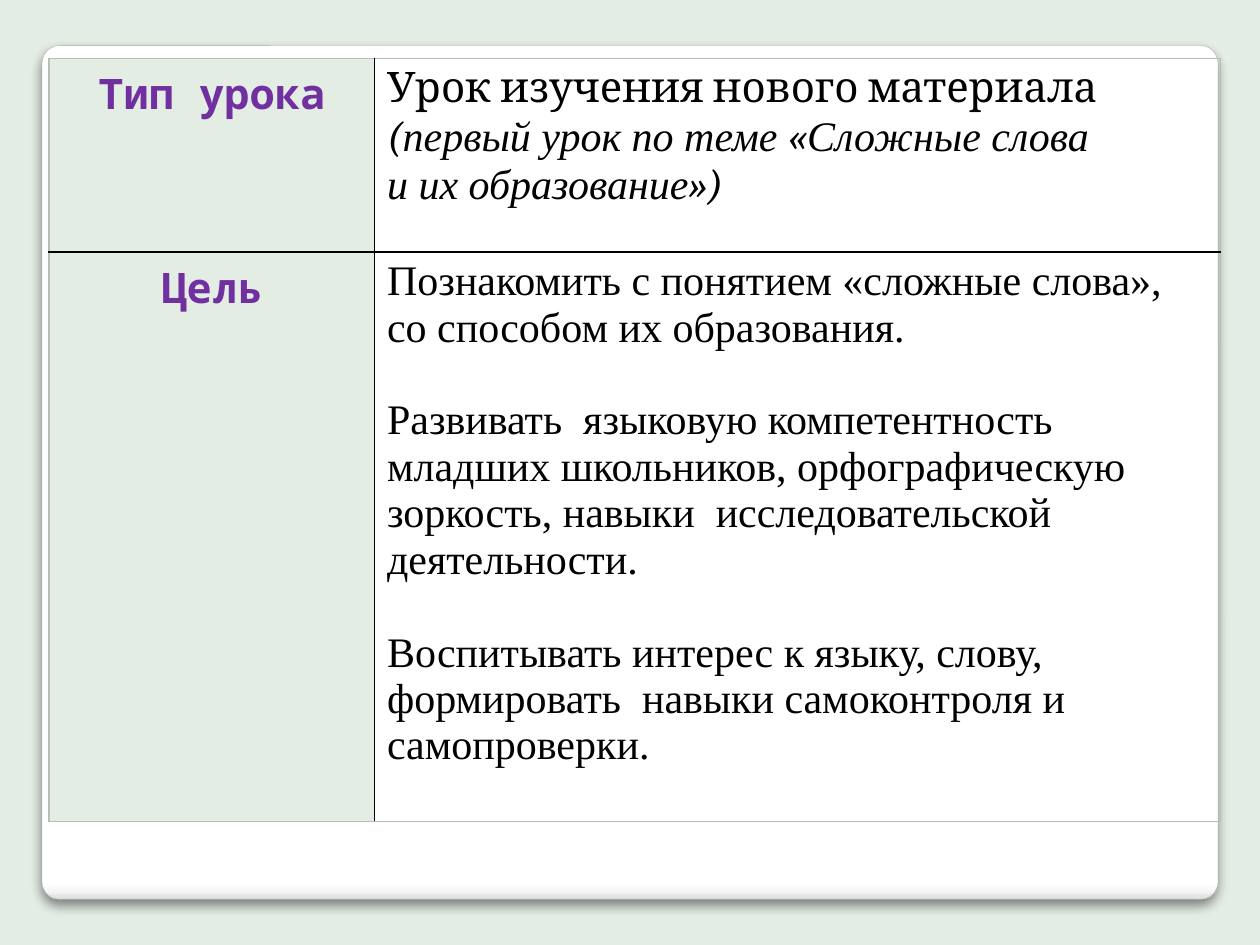
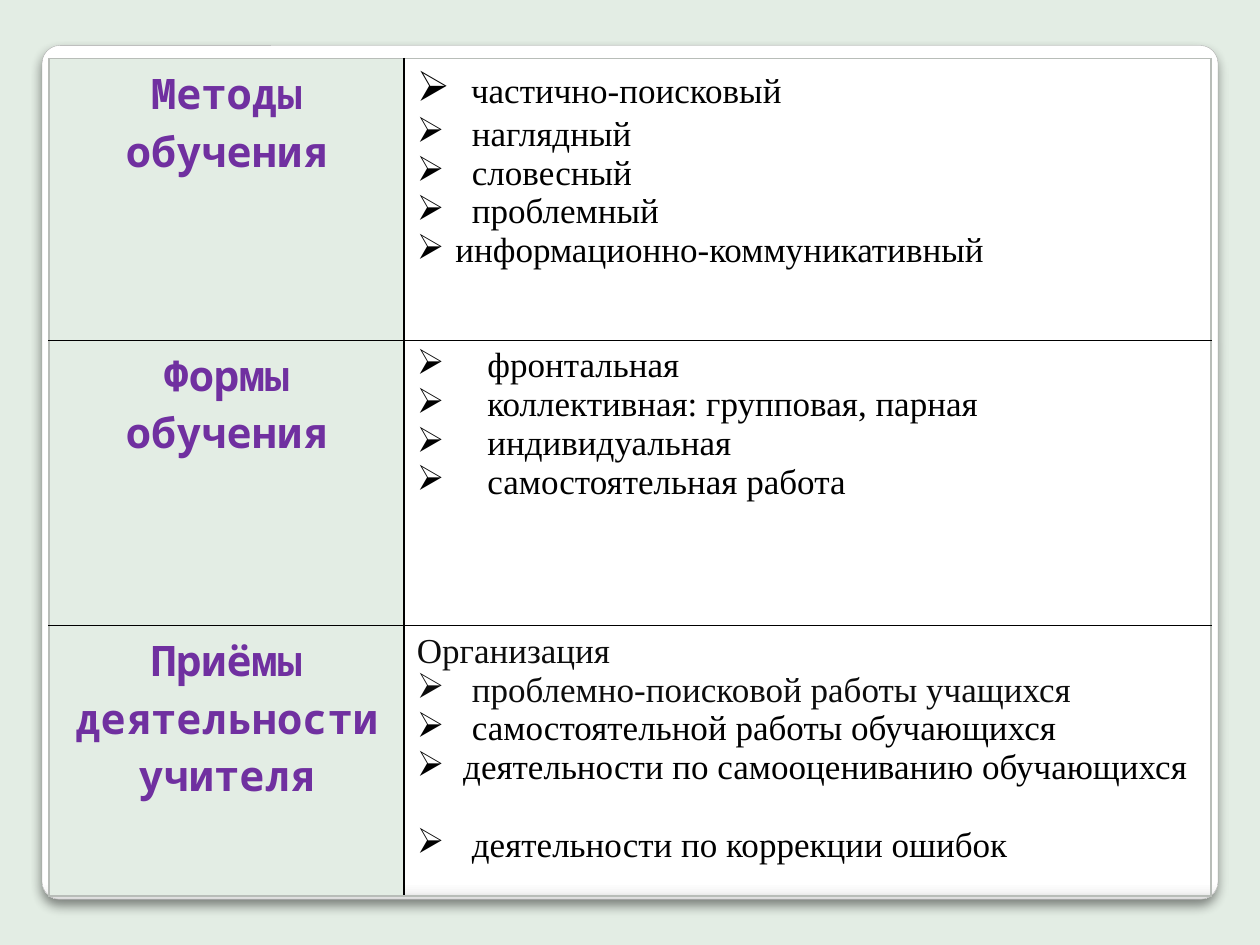
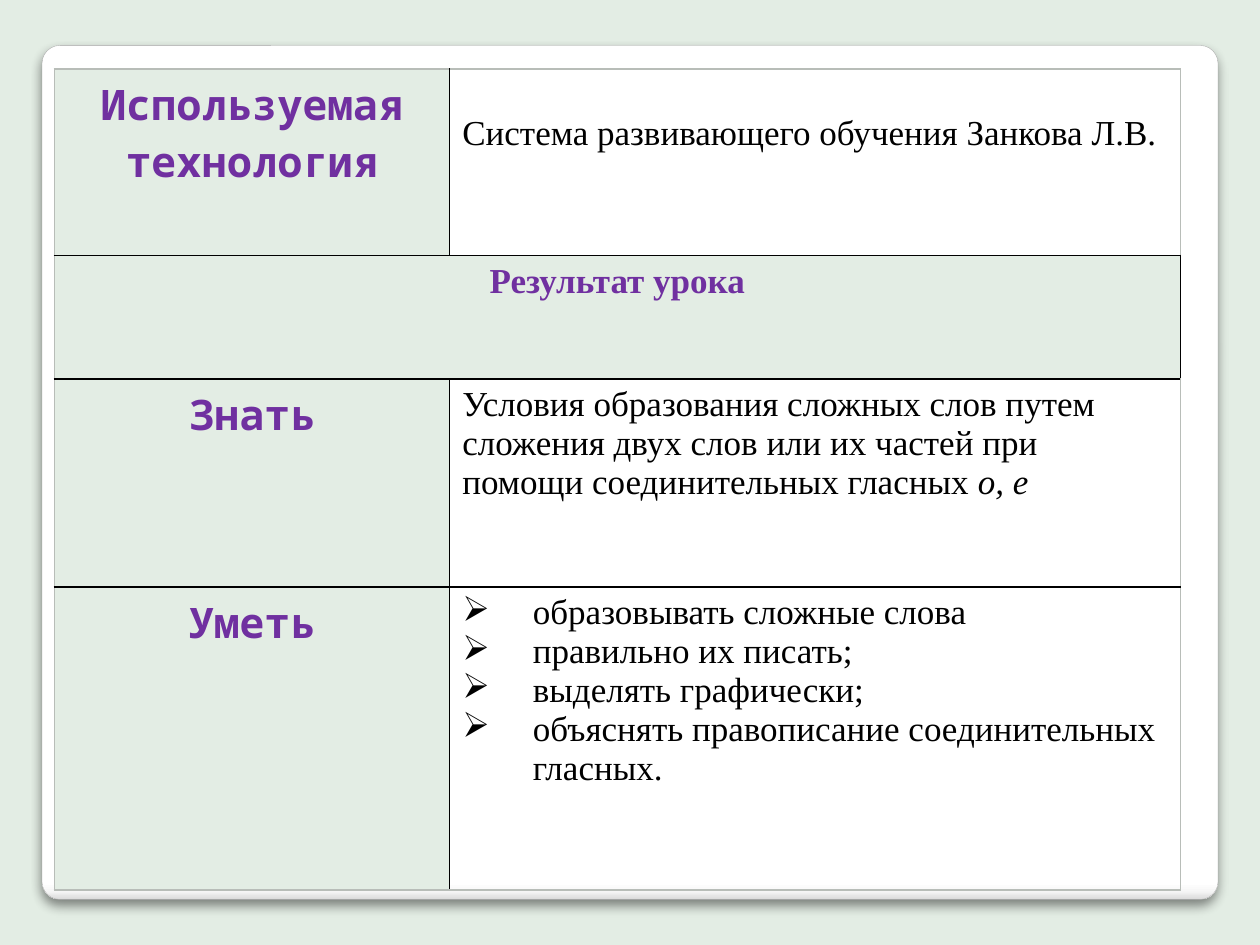
from dataclasses import dataclass

from lxml import etree
from pptx import Presentation
from pptx.dml.color import RGBColor
from pptx.enum.shapes import MSO_SHAPE
from pptx.enum.text import PP_ALIGN
from pptx.oxml.ns import qn
from pptx.util import Pt

CENTER = PP_ALIGN.CENTER
LEFT = PP_ALIGN.LEFT
ROUNDED = MSO_SHAPE.ROUNDED_RECTANGLE

GREEN = "E3EDE4"
PURPLE = "7030A0"
BLACK = "000000"
NEAR_BLACK = "0D0D0D"
EDGE_GREY = "B8BDB8"
MONO = "Noto Sans Mono"
SERIF = "Times New Roman"
CAMBRIA = "Cambria"
PANEL_STOPS = [(0, "FFFFFF"), (98, "FFFFFF"), (99, "F7F7F7"), (100, "DADADA")]
WIDE_INDENT = 40.3
SPACED_INDENT = 31.5


def rgb(value):
    return RGBColor.from_string(value)


def add_xml(parent, tag, **attributes):
    return etree.SubElement(parent, qn(tag), {key: str(value) for key, value in attributes.items()})


@dataclass
class Line:
    text: str = ""
    size: float = 20
    font: str = SERIF
    color: str = BLACK
    bold: bool = False
    align: int = LEFT
    indent: float = 0
    bullet_percent: int = 100
    before: float = 0
    after: float = 0
    pieces: tuple = ()


@dataclass
class Content:
    lines: list
    fill: str = ""
    top: float = 3.6
    span: int = 1


def label(text, size=24, font=MONO, span=1):
    line = Line(text, size, font, PURPLE, True, CENTER)
    return Content([line], GREEN, span=span)


def bullets(*texts, indent=WIDE_INDENT):
    return [Line(text, indent=indent) for text in texts]


class Deck:
    def __init__(self):
        self.presentation = Presentation()
        self.presentation.slide_width = Pt(720)
        self.presentation.slide_height = Pt(540)
        background = self.presentation.slide_master.background.fill
        background.solid()
        background.fore_color.rgb = rgb(GREEN)
        self.slide = None

    def new_slide(self):
        self.slide = self.presentation.slides.add_slide(self.presentation.slide_layouts[6])
        self.panel()

    def panel(self):
        shape = self.slide.shapes.add_shape(ROUNDED, Pt(24), Pt(26), Pt(672), Pt(488))
        shape.adjustments[0] = 0.021
        shape.line.color.rgb = rgb("A4A4A4")
        shape.line.width = Pt(0.16)
        shape.shadow.inherit = False
        shape.fill.gradient()
        shape.fill.gradient_angle = 270
        properties = shape._element.spPr
        stops = properties.find(".//" + qn("a:gsLst"))
        for stop in list(stops):
            stops.remove(stop)
        for position, color in PANEL_STOPS:
            add_xml(add_xml(stops, "a:gs", pos=position * 1000), "a:srgbClr", val=color)
        shadow = add_xml(properties.find(qn("a:effectLst")), "a:outerShdw",
                         blurRad=Pt(6), dist=Pt(4), dir=5400000, algn="t", rotWithShape=0)
        add_xml(add_xml(shadow, "a:srgbClr", val=BLACK), "a:alpha", val=45000)

    def table(self, left, top, widths, heights, rows):
        frame = self.slide.shapes.add_table(
            len(heights), len(widths), Pt(left), Pt(top), Pt(sum(widths)), Pt(sum(heights)))
        table = frame.table
        table.first_row = table.horz_banding = False
        for column, width in zip(table.columns, widths):
            column.width = Pt(width)
        for row, height in zip(table.rows, heights):
            row.height = Pt(height)
        last_row, last_column = len(heights) - 1, len(widths) - 1
        for row_index, contents in enumerate(rows):
            for column_index in range(len(widths)):
                self.borders(table.cell(row_index, column_index), {
                    "a:lnL": column_index == 0, "a:lnR": column_index == last_column,
                    "a:lnT": row_index == 0, "a:lnB": row_index == last_row})
            for column_index, content in enumerate(contents):
                cell = table.cell(row_index, column_index)
                if content.span > 1:
                    cell.merge(table.cell(row_index, column_index + content.span - 1))
                self.fill_cell(cell, content)

    def borders(self, cell, sides):
        properties = cell._tc.get_or_add_tcPr()
        for tag, is_outer in sides.items():
            line = add_xml(properties, tag, w=Pt(1))
            color = EDGE_GREY if is_outer else BLACK
            add_xml(add_xml(line, "a:solidFill"), "a:srgbClr", val=color)
        cell.fill.background()

    def fill_cell(self, cell, content):
        if content.fill:
            cell.fill.solid()
            cell.fill.fore_color.rgb = rgb(content.fill)
        cell.margin_top = Pt(content.top)
        frame = cell.text_frame
        for index, line in enumerate(content.lines):
            paragraph = frame.add_paragraph() if index else frame.paragraphs[0]
            self.set_line(paragraph, line)

    def set_line(self, paragraph, line):
        paragraph.alignment = line.align
        paragraph.space_before = Pt(line.before)
        paragraph.space_after = Pt(line.after)
        font = paragraph.font
        font.size = Pt(line.size)
        font.name = line.font
        font.bold = line.bold
        font.color.rgb = rgb(line.color)
        if line.indent:
            self.bullet(paragraph, line)
        if line.text:
            paragraph.add_run().text = line.text
        for text, name, italic in line.pieces:
            if text == "\n":
                paragraph.add_line_break()
                continue
            run = paragraph.add_run()
            run.text = text
            run.font.name = name
            run.font.italic = italic

    def bullet(self, paragraph, line):
        properties = paragraph._p.get_or_add_pPr()
        properties.set("marL", str(Pt(line.indent)))
        properties.set("indent", str(-Pt(line.indent)))
        size = etree.Element(qn("a:buSzPct"), val=str(line.bullet_percent * 1000))
        character = etree.Element(qn("a:buChar"), char="➢")
        defaults = properties.find(qn("a:defRPr"))
        defaults.addprevious(size)
        defaults.addprevious(character)


def type_and_goal(deck):
    deck.new_slide()
    lesson_type = [
        Line("Урок изучения нового материала", 24, CAMBRIA),
        Line(size=24, pieces=(
            ("(", CAMBRIA, True), ("первый урок по теме ", SERIF, True), ("«", CAMBRIA, True),
            ("Сложные слова", SERIF, True), ("\n", SERIF, True),
            ("и их образование", SERIF, True), ("»)", CAMBRIA, True))),
    ]
    goals = [
        Line("Познакомить с понятием «сложные слова», со способом их образования.", 24),
        Line("Развивать  языковую компетентность", 24, before=26.5),
        Line("младших школьников, орфографическую", 24),
        Line("зоркость, навыки  исследовательской", 24),
        Line("деятельности.", 24),
        Line("Воспитывать интерес к языку, слову,", 24, before=26.5),
        Line("формировать  навыки самоконтроля и", 24),
        Line("самопроверки.", 24),
    ]
    deck.table(28, 33.5, [186, 483.5], [110.5, 325.5], [
        [label("Тип урока"), Content(lesson_type)],
        [label("Цель"), Content(goals)],
    ])


def methods_and_forms(deck):
    deck.new_slide()
    methods = [
        Line("частично-поисковый", indent=31, bullet_percent=120, after=2),
        *bullets("наглядный", "словесный", "проблемный", indent=SPACED_INDENT),
        *bullets("информационно-коммуникативный", indent=22),
    ]
    forms = bullets("фронтальная", "коллективная: групповая, парная",
                    "индивидуальная", "самостоятельная работа")
    techniques = [
        Line("Организация", color=NEAR_BLACK),
        Line("проблемно-поисковой работы учащихся", color=NEAR_BLACK, indent=SPACED_INDENT),
        *bullets("самостоятельной работы обучающихся", indent=SPACED_INDENT),
        *bullets("деятельности по самооцениванию обучающихся", indent=26.5),
        Line("деятельности по коррекции ошибок", indent=SPACED_INDENT, before=22),
    ]
    deck.table(28, 33.5, [203, 461], [161, 163, 154.5], [
        [label("Методы обучения"), Content(methods, top=8)],
        [label("Формы обучения"), Content(forms)],
        [label("Приёмы деятельности учителя"), Content(techniques)],
    ])


def technology_and_results(deck):
    deck.new_slide()
    knowledge = [
        Line("Условия образования сложных слов путем"),
        Line("сложения двух слов или их частей при"),
        Line(pieces=(("помощи соединительных гласных ", SERIF, False), ("о, е", SERIF, True))),
    ]
    skills = bullets("образовывать сложные слова", "правильно их писать;", "выделять графически;",
                     "объяснять правописание соединительных гласных.")
    deck.table(31, 39.5, [226, 417.5], [106.5, 70.5, 119, 173], [
        [label("Используемая технология"),
         Content([Line("Система развивающего обучения Занкова Л.В.")], top=25.7)],
        [label("Результат урока", 20, SERIF, span=2)],
        [label("Знать"), Content(knowledge)],
        [label("Уметь"), Content(skills)],
    ])


def main():
    deck = Deck()
    type_and_goal(deck)
    methods_and_forms(deck)
    technology_and_results(deck)
    deck.presentation.save("out.pptx")


if __name__ == "__main__":
    main()
